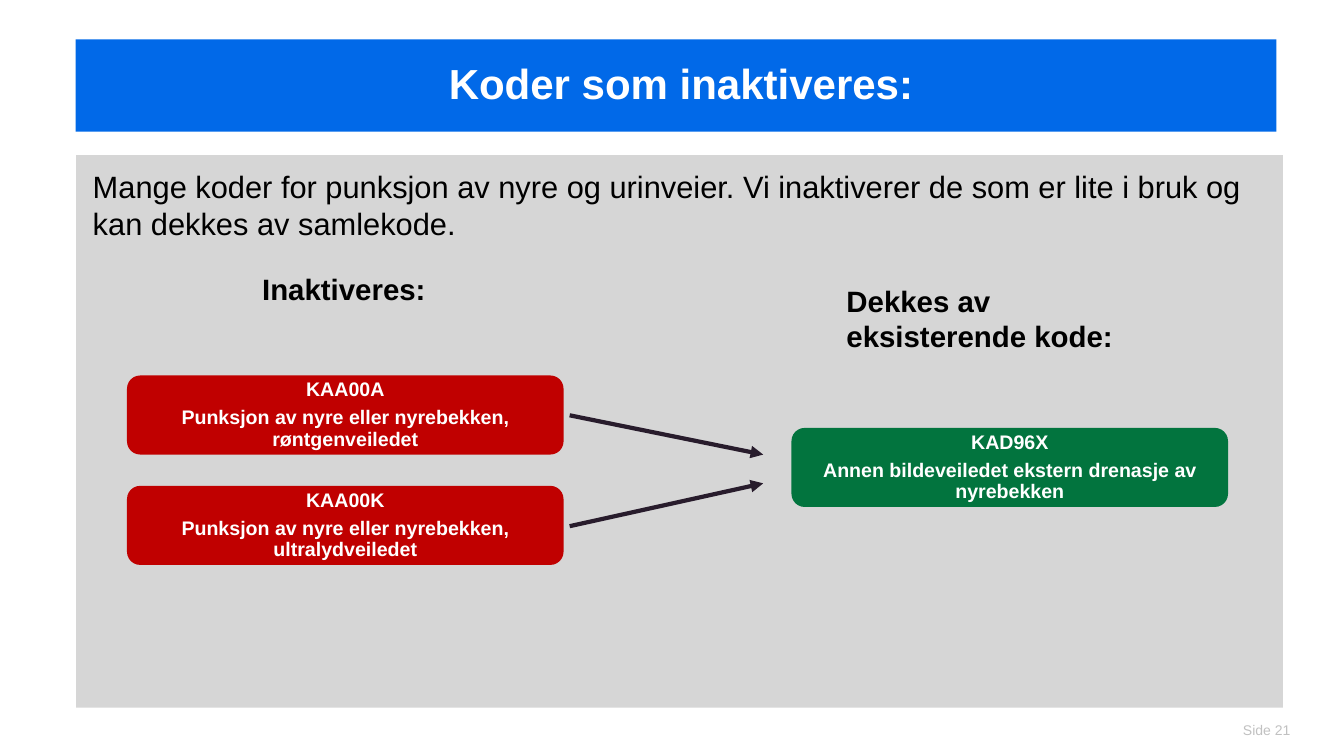
"""Builds the slide on procedure codes that are being deactivated."""
from dataclasses import dataclass

from lxml import etree
from pptx import Presentation
from pptx.dml.color import RGBColor
from pptx.enum.shapes import MSO_CONNECTOR, MSO_SHAPE
from pptx.enum.text import MSO_ANCHOR, MSO_AUTO_SIZE, PP_ALIGN
from pptx.oxml.ns import qn
from pptx.util import Pt

RECT, ROUND = MSO_SHAPE.RECTANGLE, MSO_SHAPE.ROUNDED_RECTANGLE
STRAIGHT = MSO_CONNECTOR.STRAIGHT
TOP, MIDDLE = MSO_ANCHOR.TOP, MSO_ANCHOR.MIDDLE
LEFT, CENTER, RIGHT = PP_ALIGN.LEFT, PP_ALIGN.CENTER, PP_ALIGN.RIGHT
FONT = "Arial"
WHITE, BLACK, GREY, PALE = "FFFFFF", "000000", "D6D6D6", "C1C1C1"
BLUE, RED, GREEN, DARK = "0169E8", "C00000", "02743E", "281C2C"
CODE_W, CODE_H = 623.5, 113
OLD_X, NEW_X = 181.4, 1130.4
ARROW_X1, ARROW_X2 = 813.6, 1090


@dataclass
class Label:
    text: str
    x: float
    y: float
    w: float
    h: float
    size: float
    color: str = BLACK
    bold: bool = False
    align: PP_ALIGN = LEFT
    anchor: MSO_ANCHOR = TOP
    inset: float = 0
    after: float = 0


@dataclass
class Code:
    code: str
    name: str
    x: float
    y: float
    color: str


@dataclass
class Arrow:
    y1: float
    y2: float


LABELS = [
    Label("Side 21", 1730.2, 1028.9, 113, 28.8, 20, PALE, align=RIGHT, anchor=MIDDLE),
    Label("Mange koder for punksjon av nyre og urinveier. Vi inaktiverer de som er "
          "lite i bruk og kan dekkes av samlekode.", 132.5, 239, 1700, 776.9, 44),
    Label("Inaktiveres:", 331.2, 361.4, 333.4, 137.5, 42, bold=True, inset=43.2, after=10),
    Label("Dekkes av eksisterende kode:", 1165.7, 361.4, 493.9, 188.6, 42,
          bold=True, inset=43.2, after=10),
]
CODES = [
    Code("KAA00A", "Punksjon av nyre eller nyrebekken, røntgenveiledet", OLD_X, 536.4, RED),
    Code("KAA00K", "Punksjon av nyre eller nyrebekken, ultralydveiledet", OLD_X, 694.1, RED),
    Code("KAD96X", "Annen bildeveiledet ekstern drenasje av nyrebekken", NEW_X, 611.3, GREEN),
]
ARROWS = [Arrow(593.3, 649.4), Arrow(751.7, 690.5)]


def rgb(color: str) -> RGBColor:
    return RGBColor.from_string(color)


def style_text(tf, size: float, color: str, bold: bool, align: PP_ALIGN,
               anchor: MSO_ANCHOR, after: float = 0, spacing: float = 1.0) -> None:
    tf.word_wrap = True
    tf.vertical_anchor = anchor
    for p in tf.paragraphs:
        p.alignment = align
        p.line_spacing = spacing
        p.space_before = Pt(0)
        p.space_after = Pt(after)
        for r in p.runs:
            r.font.name = FONT
            r.font.size = Pt(size)
            r.font.bold = bold
            r.font.color.rgb = rgb(color)


def set_insets(tf, left: float, other: float) -> None:
    tf.margin_left = Pt(left)
    tf.margin_top = tf.margin_right = tf.margin_bottom = Pt(other)


def add_box(s, kind: MSO_SHAPE, x: float, y: float, w: float, h: float, color: str):
    sp = s.shapes.add_shape(kind, Pt(x), Pt(y), Pt(w), Pt(h))
    sp.shadow.inherit = False
    sp.fill.solid()
    sp.fill.fore_color.rgb = rgb(color)
    sp.line.fill.background()
    return sp


def set_title(s, text: str) -> None:
    sp = s.shapes.title
    sp.left, sp.top, sp.width, sp.height = Pt(108), Pt(56.2), Pt(1715), Pt(131.8)
    sp.fill.solid()
    sp.fill.fore_color.rgb = rgb(BLUE)
    tf = sp.text_frame
    tf.text = text
    tf.auto_size = MSO_AUTO_SIZE.NONE
    set_insets(tf, 14.4, 0)
    style_text(tf, 60, WHITE, True, CENTER, MIDDLE, spacing=0.9)


def add_label(s, label: Label) -> None:
    sp = s.shapes.add_textbox(Pt(label.x), Pt(label.y), Pt(label.w), Pt(label.h))
    tf = sp.text_frame
    tf.text = label.text
    set_insets(tf, label.inset, label.inset)
    style_text(tf, label.size, label.color, label.bold, label.align, label.anchor, label.after)


def add_code(s, code: Code) -> None:
    sp = add_box(s, ROUND, code.x, code.y, CODE_W, CODE_H, code.color)
    tf = sp.text_frame
    tf.text = f"{code.code}\n{code.name}"
    style_text(tf, 28, WHITE, True, CENTER, MIDDLE, after=10, spacing=0.9)


def add_arrow(s, arrow: Arrow) -> None:
    sp = s.shapes.add_connector(STRAIGHT, Pt(ARROW_X1), Pt(arrow.y1),
                                Pt(ARROW_X2), Pt(arrow.y2))
    sp.line.color.rgb = rgb(DARK)
    sp.line.width = Pt(6)
    etree.SubElement(sp.line._get_or_add_ln(), qn("a:tailEnd"), type="triangle")
    etree.SubElement(sp._element.spPr, qn("a:effectLst"))


def main() -> None:
    prs = Presentation()
    prs.slide_width, prs.slide_height = Pt(1919.52), Pt(1080)
    s = prs.slides.add_slide(prs.slide_layouts[5])
    set_title(s, "Koder som inaktiveres:")
    add_box(s, RECT, 108.7, 221.8, 1723.7, 789.1, GREY)
    for label in LABELS:
        add_label(s, label)
    for code in CODES:
        add_code(s, code)
    for arrow in ARROWS:
        add_arrow(s, arrow)
    prs.save("out.pptx")


if __name__ == "__main__":
    main()
